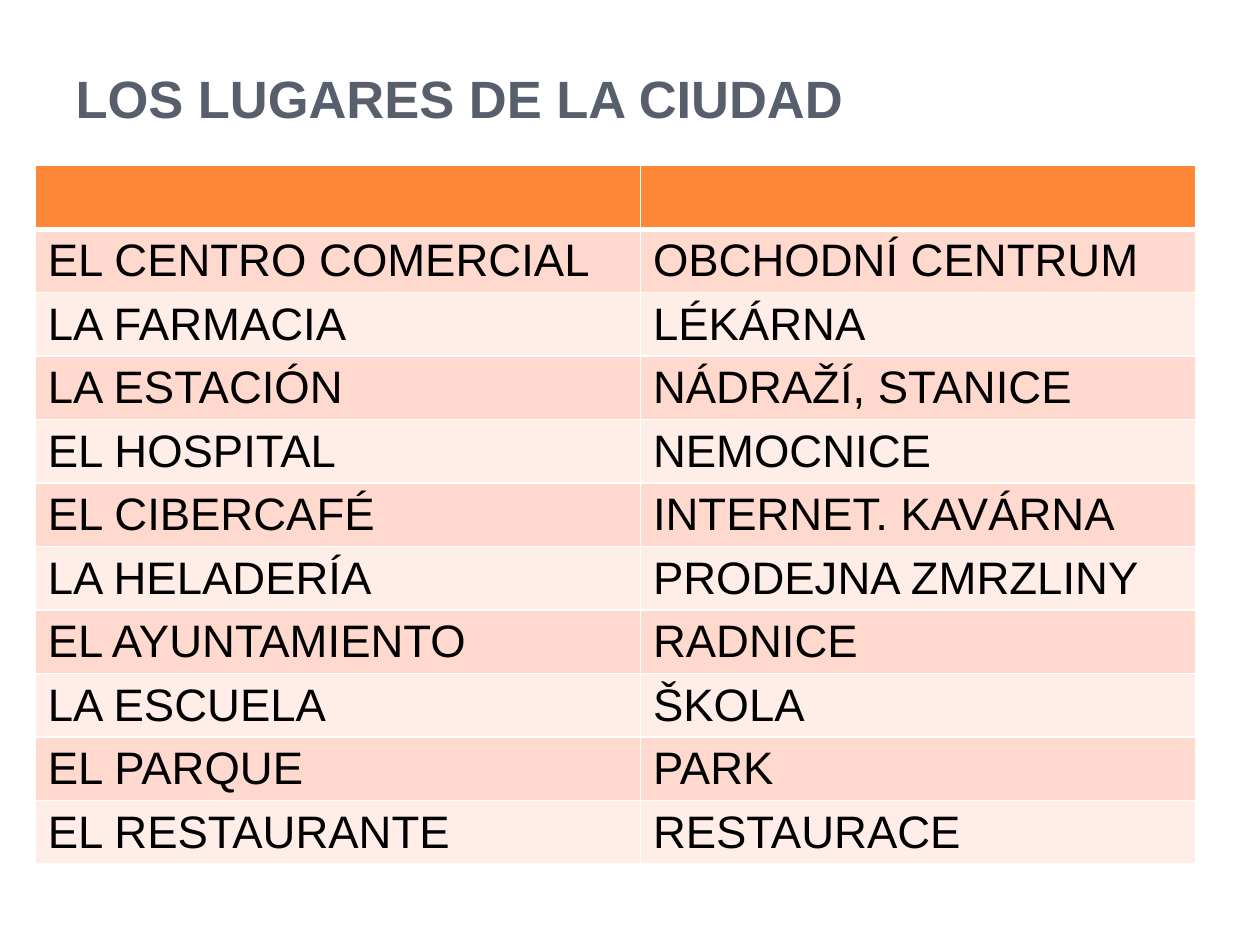
import pptx
import pptx.dml.color
import pptx.enum.text
import pptx.oxml
import pptx.oxml.ns
import pptx.util
from pptx.util import Cm

TITLE = "LOS LUGARES DE LA CIUDAD"
PLACES = [
    ("EL CENTRO COMERCIAL", "OBCHODNÍ CENTRUM"),
    ("LA FARMACIA", "LÉKÁRNA"),
    ("LA ESTACIÓN", "NÁDRAŽÍ, STANICE"),
    ("EL HOSPITAL", "NEMOCNICE"),
    ("EL CIBERCAFÉ", "INTERNET. KAVÁRNA"),
    ("LA HELADERÍA", "PRODEJNA ZMRZLINY"),
    ("EL AYUNTAMIENTO", "RADNICE"),
    ("LA ESCUELA", "ŠKOLA"),
    ("EL PARQUE", "PARK"),
    ("EL RESTAURANTE", "RESTAURACE"),
]
COLORS = {
    "title": "575F6D",
    "text": "000000",
    "header": "FE8637",
    "odd": "FFD9CE",
    "even": "FFEDE8",
    "border": "FFFFFF",
}
FONT = "Arial"
COL_WIDTHS = (12.2, 11.2)
ROW_HEIGHT = 1.28


def rgb(name):
    return pptx.dml.color.RGBColor.from_string(COLORS[name])


def style_font(font, size, color, bold=False):
    font.name = FONT
    font.size = pptx.util.Pt(size)
    font.bold = bold
    font.color.rgb = rgb(color)


def set_borders(cell, top, bottom):
    tcPr = cell._tc.get_or_add_tcPr()
    widths = {"lnL": 1, "lnR": 1, "lnT": top, "lnB": bottom}
    for i, (tag, width) in enumerate(widths.items()):
        tcPr.insert(i, pptx.oxml.parse_xml(
            f'<a:{tag} {pptx.oxml.ns.nsdecls("a")} w="{pptx.util.Pt(width)}">'
            f'<a:solidFill><a:srgbClr val="{COLORS["border"]}"/></a:solidFill>'
            f'</a:{tag}>'))


def add_title(s):
    title = s.shapes.title
    title.left, title.top = Cm(1.27), Cm(0.76)
    title.width, title.height = Cm(20.75), Cm(1.96)
    tf = title.text_frame
    tf.text = TITLE
    tf.vertical_anchor = pptx.enum.text.MSO_ANCHOR.BOTTOM
    p = tf.paragraphs[0]
    p.alignment = pptx.enum.text.PP_ALIGN.LEFT
    style_font(p.runs[0].font, 30, "title", bold=True)


def add_places(s):
    rows = [("", "")] + PLACES
    table = s.shapes.add_table(
        len(rows), len(COL_WIDTHS), Cm(0.71), Cm(3.34),
        Cm(sum(COL_WIDTHS)), Cm(ROW_HEIGHT * len(rows))).table
    for column, width in zip(table.columns, COL_WIDTHS):
        column.width = Cm(width)
    for i, words in enumerate(rows):
        table.rows[i].height = Cm(ROW_HEIGHT)
        fill = "header" if i == 0 else "odd" if i % 2 else "even"
        for j, word in enumerate(words):
            cell = table.cell(i, j)
            cell.fill.solid()
            cell.fill.fore_color.rgb = rgb(fill)
            set_borders(cell, 3 if i == 1 else 1, 3 if i == 0 else 1)
            cell.text_frame.text = word
            for r in cell.text_frame.paragraphs[0].runs:
                style_font(r.font, 26, "text")


def main():
    prs = pptx.Presentation()
    prs.slide_width, prs.slide_height = Cm(25.4), Cm(19.05)
    s = prs.slides.add_slide(prs.slide_layouts[5])
    add_title(s)
    add_places(s)
    prs.save("out.pptx")


if __name__ == "__main__":
    main()
